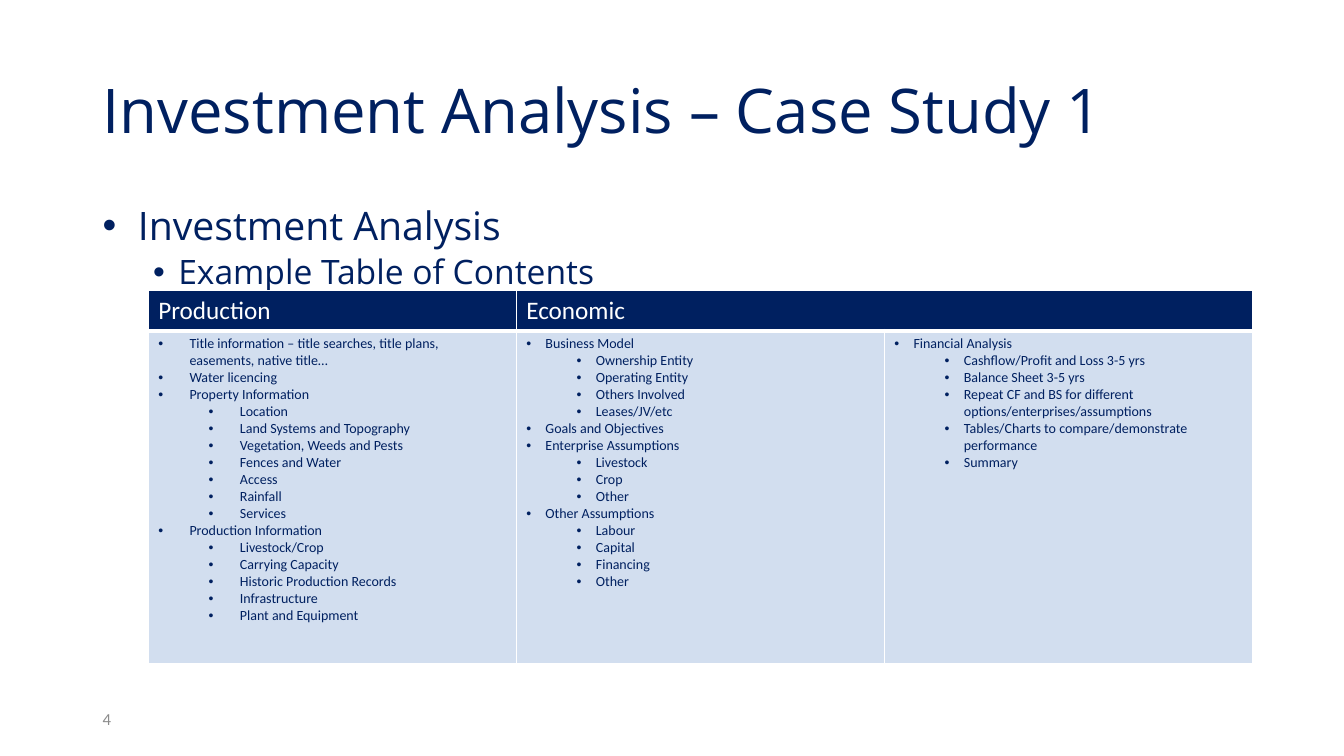
import pptx
import pptx.dml.color
import pptx.enum.text
import pptx.oxml
import pptx.oxml.ns
import pptx.util
from pptx.util import Inches

NAVY = pptx.dml.color.RGBColor(0x00, 0x20, 0x60)
PALE_BLUE = pptx.dml.color.RGBColor(0xD2, 0xDE, 0xEF)
GREY = pptx.dml.color.RGBColor(0x8C, 0x8C, 0x8C)
WHITE = pptx.dml.color.RGBColor(0xFF, 0xFF, 0xFF)
HEADING_FONT = "Open Sans"
TABLE_FONT = "Calibri"
MIDDLE = pptx.enum.text.MSO_ANCHOR.MIDDLE
TOP = pptx.enum.text.MSO_ANCHOR.TOP

# Each column: hanging indent, then its topics with their sub-topics
CONTENTS = [
    (0.31, [
        ("Title information – title searches, title plans, easements, native title…", []),
        ("Water licencing", []),
        ("Property Information", [
            "Location", "Land Systems and Topography", "Vegetation, Weeds and Pests",
            "Fences and Water", "Access", "Rainfall", "Services"]),
        ("Production Information", [
            "Livestock/Crop", "Carrying Capacity", "Historic Production Records",
            "Infrastructure", "Plant and Equipment"]),
    ]),
    (0.19, [
        ("Business Model", [
            "Ownership Entity", "Operating Entity", "Others Involved", "Leases/JV/etc"]),
        ("Goals and Objectives", []),
        ("Enterprise Assumptions", ["Livestock", "Crop", "Other"]),
        ("Other Assumptions", ["Labour", "Capital", "Financing", "Other"]),
    ]),
    (0.19, [
        ("Financial Analysis", [
            "Cashflow/Profit and Loss 3-5 yrs", "Balance Sheet 3-5 yrs",
            "Repeat CF and BS for different options/enterprises/assumptions",
            "Tables/Charts to compare/demonstrate performance", "Summary"]),
    ]),
]


def add_text_box(page, left, top, width, height, anchor):
    box = page.shapes.add_textbox(Inches(left), Inches(top), Inches(width), Inches(height))
    frame = box.text_frame
    frame.word_wrap = True
    frame.vertical_anchor = anchor
    return frame


def next_paragraph(frame):
    """Use the empty first paragraph, or add another."""
    first = frame.paragraphs[0]
    return first if not first.runs else frame.add_paragraph()


def add_span(para, text, size, font, color):
    span = para.add_run()
    span.text = text
    span.font.size = pptx.util.Pt(size)
    span.font.name = font
    span.font.color.rgb = color


def add_bullet(para, level, margin, hanging):
    para.level = level
    properties = para._p.get_or_add_pPr()
    properties.set("marL", str(Inches(margin)))
    properties.set("indent", str(-Inches(hanging)))
    for tag, name, value in (("a:buFont", "typeface", "Arial"), ("a:buChar", "char", "•")):
        bullet = pptx.oxml.parse_xml(f"<{tag} {pptx.oxml.ns.nsdecls('a')}/>")
        bullet.set(name, value)
        properties.append(bullet)


def add_title(page, left, top, width, height):
    para = add_text_box(page, left, top, width, height, MIDDLE).paragraphs[0]
    para.line_spacing = 0.9
    add_span(para, "Investment Analysis – Case Study 1", 44, HEADING_FONT, NAVY)


def add_body(page, left, top, width, height):
    frame = add_text_box(page, left, top, width, height, TOP)
    lines = [("Investment Analysis", 28, 0.35, 0.35, 0),
             ("Example Table of Contents", 24, 0.75, 0.25, 5)]
    for level, (text, size, margin, hanging, space) in enumerate(lines):
        para = next_paragraph(frame)
        add_bullet(para, level, margin, hanging)
        para.line_spacing = 0.9
        para.space_before = pptx.util.Pt(space)
        add_span(para, text, size, HEADING_FONT, NAVY)


def add_page_number(page, left, top, width, height):
    para = add_text_box(page, left, top, width, height, MIDDLE).paragraphs[0]
    add_span(para, "4", 12, TABLE_FONT, GREY)


def style_cell(cell, color, bottom_width):
    properties = cell._tc.get_or_add_tcPr()
    for side, width in (("L", 1), ("R", 1), ("T", 1), ("B", bottom_width)):
        properties.append(pptx.oxml.parse_xml(
            f'<a:ln{side} {pptx.oxml.ns.nsdecls("a")} w="{pptx.util.Pt(width)}">'
            f'<a:solidFill><a:srgbClr val="{WHITE}"/></a:solidFill></a:ln{side}>'))
    cell.fill.solid()
    cell.fill.fore_color.rgb = color


def fill_topics(frame, hanging, topics):
    for topic, details in topics:
        for level, text in [(0, topic)] + [(1, detail) for detail in details]:
            para = next_paragraph(frame)
            add_bullet(para, level, hanging + level * 0.5, hanging)
            add_span(para, text, 10, TABLE_FONT, NAVY)


def add_contents_table(page, left, top, width, height):
    table = page.shapes.add_table(
        2, len(CONTENTS), Inches(left), Inches(top), Inches(width), Inches(height)).table
    header_height = 0.4
    table.rows[0].height = Inches(header_height)
    table.rows[1].height = Inches(height - header_height)
    for column in table.columns:
        column.width = Inches(width / len(CONTENTS))

    # Header row, with one heading over the last two columns
    table.cell(0, 1).merge(table.cell(0, 2))
    for index, heading in enumerate(["Production", "Economic"]):
        add_span(table.cell(0, index).text_frame.paragraphs[0], heading, 18, TABLE_FONT, WHITE)

    # Topic lists
    for index, (hanging, topics) in enumerate(CONTENTS):
        style_cell(table.cell(0, index), NAVY, 3)
        style_cell(table.cell(1, index), PALE_BLUE, 1)
        fill_topics(table.cell(1, index).text_frame, hanging, topics)


def main():
    deck = pptx.Presentation()
    deck.slide_width = Inches(13.33)
    deck.slide_height = Inches(7.5)
    page = deck.slides.add_slide(deck.slide_layouts[6])
    add_title(page, 0.92, 0.4, 11.5, 1.45)
    add_body(page, 0.92, 2, 11.5, 4.76)
    add_page_number(page, 0.92, 6.93, 3, 0.4)
    add_contents_table(page, 1.47, 2.88, 10.95, 3.7)
    deck.save("out.pptx")


if __name__ == "__main__":
    main()
